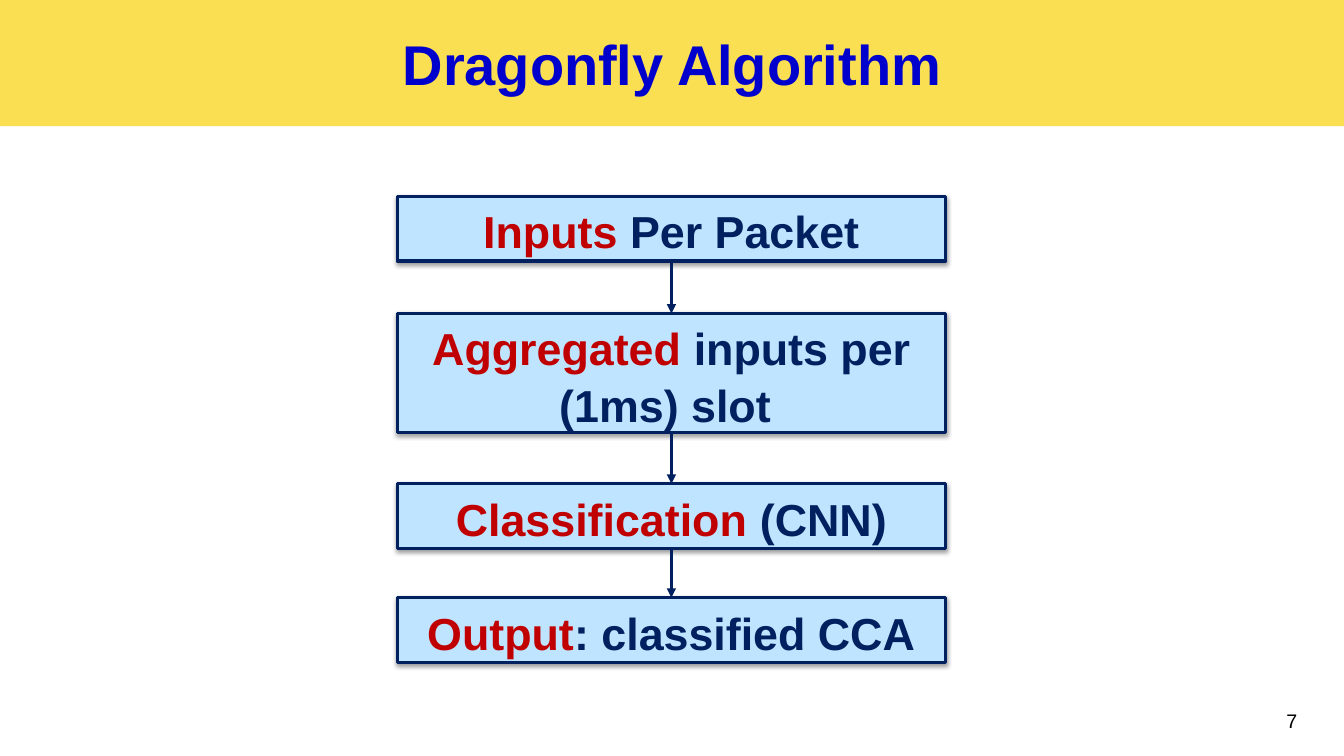
from dataclasses import dataclass

from lxml import etree
from pptx import Presentation
from pptx.dml.color import RGBColor
from pptx.enum.shapes import MSO_CONNECTOR, MSO_SHAPE
from pptx.enum.text import MSO_ANCHOR, MSO_AUTO_SIZE, PP_ALIGN
from pptx.oxml.ns import qn
from pptx.util import Cm, Pt

RECT = MSO_SHAPE.RECTANGLE
STRAIGHT = MSO_CONNECTOR.STRAIGHT
TOP, MIDDLE = MSO_ANCHOR.TOP, MSO_ANCHOR.MIDDLE
LEFT, CENTER = PP_ALIGN.LEFT, PP_ALIGN.CENTER
GROW = MSO_AUTO_SIZE.SHAPE_TO_FIT_TEXT
SITE_TOP, SITE_BOTTOM = 0, 2


@dataclass(frozen=True)
class Theme:
    font: str = "Arial"
    banner: str = "FBDF53"
    title: str = "0000CC"
    step: str = "BFE4FF"
    navy: str = "002060"
    accent: str = "C00000"
    black: str = "000000"
    title_size: int = 40
    step_size: int = 32
    number_size: int = 14
    line_width: float = 2.25


THEME = Theme()

STEPS = [
    (0, 1.63, "Inputs", " Per Packet"),
    (2.95, 3.0, "Aggregated", " inputs per (1ms) slot "),
    (7.24, 1.63, "Classification", " (CNN)"),
    (10.11, 1.63, "Output", ": classified CCA"),
]


def set_attrs(target, values):
    for name, value in values.items():
        setattr(target, name, value)


def write(tf, runs, size, bold, align, anchor):
    set_attrs(tf, {"word_wrap": True, "vertical_anchor": anchor})
    p = tf.paragraphs[0]
    p.alignment = align
    for text, color in runs:
        r = p.add_run()
        r.text = text
        set_attrs(r.font, {"name": THEME.font, "size": Pt(size), "bold": bold})
        r.font.color.rgb = RGBColor.from_string(color)
    return p


def add_rect(slide, left, top, width, height, fill):
    sp = slide.shapes.add_shape(RECT, Cm(left), Cm(top), Cm(width), Cm(height))
    sp.shadow.inherit = False
    sp.fill.solid()
    sp.fill.fore_color.rgb = RGBColor.from_string(fill)
    return sp


def style_line(line):
    line.color.rgb = RGBColor.from_string(THEME.navy)
    line.width = Pt(THEME.line_width)


def add_shadow(sp):
    effects = sp._element.spPr.find(qn("a:effectLst"))
    shadow = etree.SubElement(effects, qn("a:outerShdw"), blurRad="40000",
                              dist="20000", dir="5400000", rotWithShape="0")
    color = etree.SubElement(shadow, qn("a:srgbClr"), val=THEME.black)
    etree.SubElement(color, qn("a:alpha"), val="38000")


def add_arrow(slide, upper, lower):
    s = slide.shapes.add_connector(STRAIGHT, 0, 0, 0, 0)
    s.begin_connect(upper, SITE_BOTTOM)
    s.end_connect(lower, SITE_TOP)
    style_line(s.line)
    etree.SubElement(s.line._get_or_add_ln(), qn("a:tailEnd"), type="triangle")
    etree.SubElement(s._element.spPr, qn("a:effectLst"))


def add_banner(slide, left, top, width, height):
    sp = add_rect(slide, left, top, width, height, THEME.banner)
    sp.line.fill.background()
    write(sp.text_frame, [("Dragonfly Algorithm", THEME.title)],
          THEME.title_size, True, CENTER, MIDDLE)


def add_flow(slide, left, top, width):
    boxes = []
    for offset, height, keyword, rest in STEPS:
        sp = add_rect(slide, left, top + offset, width, height, THEME.step)
        style_line(sp.line)
        add_shadow(sp)
        p = write(sp.text_frame, [(keyword, THEME.accent), (rest, THEME.navy)],
                  THEME.step_size, True, CENTER, TOP)
        p.line_spacing = 1.05
        sp.text_frame.auto_size = GROW
        boxes.append(sp)
    for upper, lower in zip(boxes, boxes[1:]):
        add_arrow(slide, upper, lower)


def add_page_number(slide, left, top, width, height):
    s = slide.shapes.add_textbox(Cm(left), Cm(top), Cm(width), Cm(height))
    write(s.text_frame, [("7", THEME.black)], THEME.number_size, False, LEFT, TOP)


def main():
    prs = Presentation()
    set_attrs(prs, {"slide_width": Cm(33.87), "slide_height": Cm(19.05)})
    slide = prs.slides.add_slide(prs.slide_layouts[6])
    add_banner(slide, 0, 0, 33.87, 3.18)
    add_flow(slide, 10.01, 4.95, 13.82)
    add_page_number(slide, 32.17, 17.73, 1.7, 1.32)
    prs.save("out.pptx")


if __name__ == "__main__":
    main()
